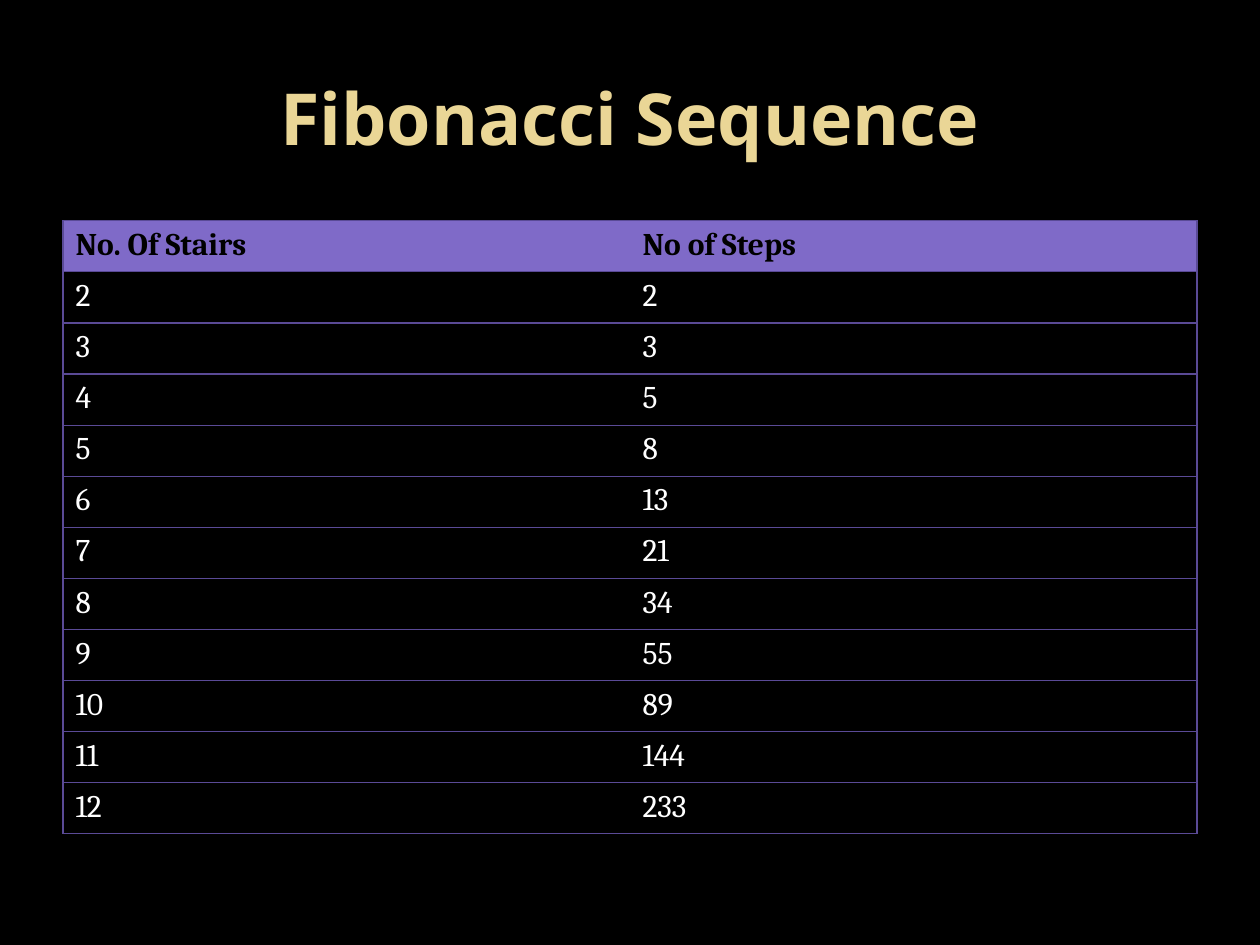
import pptx
import pptx.dml.color
import pptx.enum.text
import pptx.oxml
import pptx.oxml.ns
import pptx.util
from pptx.util import Cm, Pt

RGB = pptx.dml.color.RGBColor
BLACK = RGB(0x00, 0x00, 0x00)
WHITE = RGB(0xFF, 0xFF, 0xFF)
GOLD = RGB(0xEA, 0xD6, 0x96)
VIOLET = RGB(0x7F, 0x6A, 0xC8)
EDGE = RGB(0x5A, 0x4A, 0x96)

TITLE = {"name": "Noto Sans", "size": Pt(41), "bold": True}
HEAD = {"name": "Cambria", "size": Pt(18), "bold": True}
BODY = {"name": "Cambria", "size": Pt(18), "bold": False}


def write(para, text, form, color):
    """Add one formatted run to a paragraph."""
    run = para.add_run()
    run.text = text
    for key, value in form.items():
        setattr(run.font, key, value)
    run.font.color.rgb = color


def rule(cell, side, shown):
    """Draw or clear the border on one side of a cell."""
    fill = f'<a:solidFill><a:srgbClr val="{EDGE}"/></a:solidFill>' if shown else "<a:noFill/>"
    line = f'<a:ln{side} {pptx.oxml.ns.nsdecls("a")} w="{Pt(0.75)}">{fill}</a:ln{side}>'
    cell._tc.get_or_add_tcPr().append(pptx.oxml.parse_xml(line))


def add_title(slide, text, left, top, width, height):
    frame = slide.shapes.add_textbox(left, top, width, height).text_frame
    frame.word_wrap = True
    frame.vertical_anchor = pptx.enum.text.MSO_ANCHOR.MIDDLE
    para = frame.paragraphs[0]
    para.alignment = pptx.enum.text.PP_ALIGN.CENTER
    write(para, text, TITLE, GOLD)


def add_grid(slide, rows, left, top, width, height):
    count = len(rows[0])
    table = slide.shapes.add_table(len(rows), count, left, top, width, height).table
    table.horz_banding = False
    for row, texts in enumerate(rows):
        table.rows[row].height = height // len(rows)
        for col, text in enumerate(texts):
            cell = table.cell(row, col)
            # Outer frame and row lines, no line between columns
            sides = {"L": col == 0, "R": col == count - 1, "T": True, "B": True}
            for side, shown in sides.items():
                rule(cell, side, shown)
            # Filled heading row, clear body rows
            para = cell.text_frame.paragraphs[0]
            if row == 0:
                cell.fill.solid()
                cell.fill.fore_color.rgb = VIOLET
                write(para, text, HEAD, BLACK)
            else:
                cell.fill.background()
                write(para, text, BODY, WHITE)


def stair_rows(last):
    """Each count of steps is the sum of the two before it."""
    rows = [("No. Of Stairs", "No of Steps")]
    prev, steps = 1, 2
    for stairs in range(2, last + 1):
        rows.append((str(stairs), str(steps)))
        prev, steps = steps, prev + steps
    return rows


def main():
    deck = pptx.Presentation()
    deck.slide_width, deck.slide_height = Cm(25.4), Cm(19.05)
    slide = deck.slides.add_slide(deck.slide_layouts[6])
    slide.background.fill.solid()
    slide.background.fill.fore_color.rgb = BLACK

    left, width = Cm(1.27), Cm(22.86)
    add_title(slide, "Fibonacci Sequence", left, Cm(0.76), width, Cm(3.18))
    add_grid(slide, stair_rows(12), left, Cm(4.45), width, Cm(12.36))
    deck.save("out.pptx")


if __name__ == "__main__":
    main()
